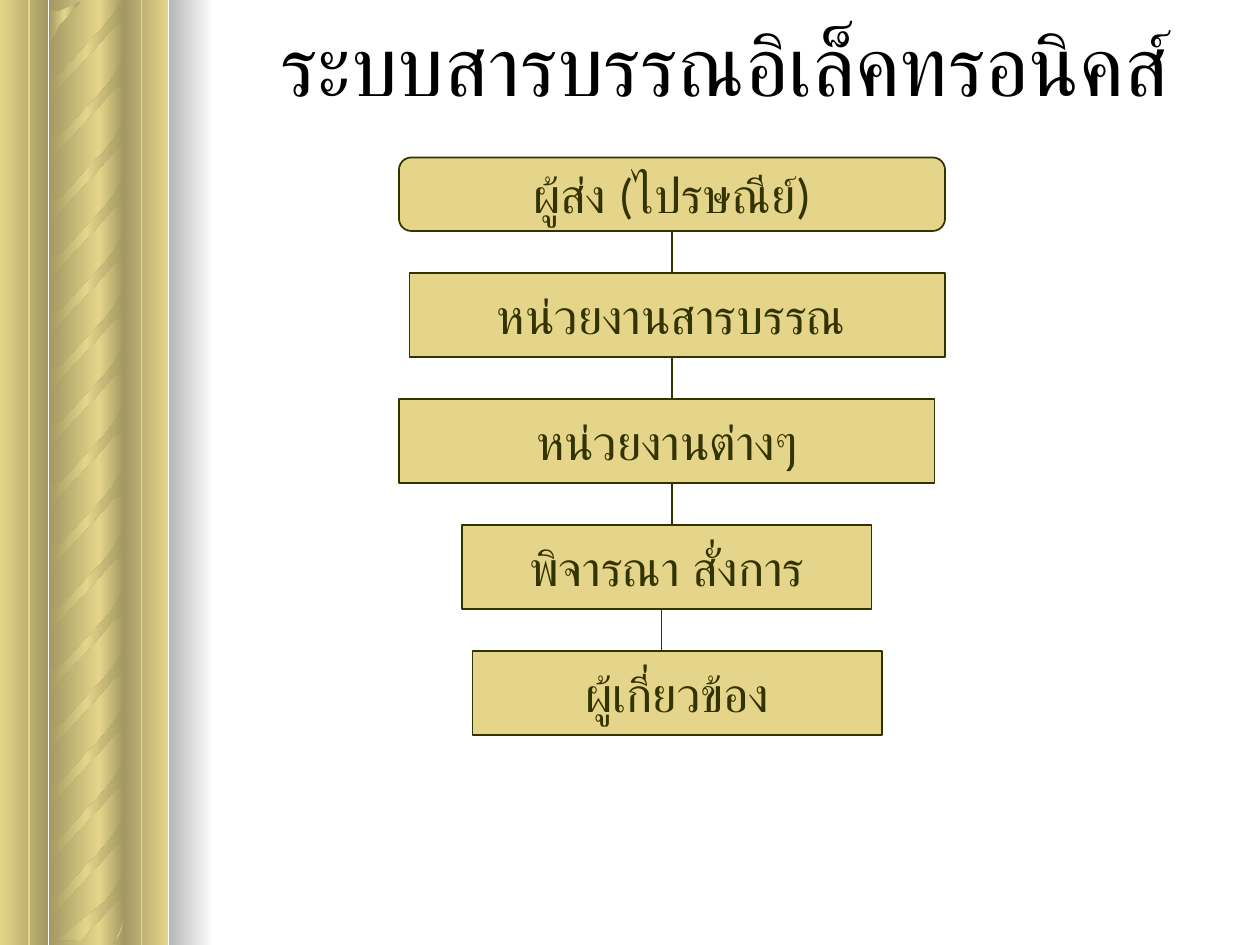
from dataclasses import dataclass

from lxml import etree
from pptx import Presentation
from pptx.dml.color import RGBColor
from pptx.enum.shapes import MSO_CONNECTOR, MSO_SHAPE
from pptx.enum.text import MSO_ANCHOR, PP_ALIGN
from pptx.oxml.ns import qn
from pptx.util import Pt

RECTANGLE = MSO_SHAPE.RECTANGLE
ROUNDED = MSO_SHAPE.FLOWCHART_ALTERNATE_PROCESS
STRAIGHT = MSO_CONNECTOR.STRAIGHT
MIDDLE = MSO_ANCHOR.MIDDLE
CENTER = PP_ALIGN.CENTER

WIDTH, HEIGHT = 720, 540
HALF = 269

STRAND = [
    (70.8, 6.6), (70.8, 24.2), (69.8, 23.5), (67, 23.5), (65.5, 24.2),
    (63.4, 26.2), (58.2, 32.6), (46.1, 45.7), (33.8, 59.2), (31.7, 63),
    (29.8, 66.8), (28.6, 72.5), (28, 80.5), (28, 45.5), (28.2, 49),
    (28.8, 50.3), (30, 51), (31.5, 51.5), (33.3, 51.5), (35, 50.8),
    (59.8, 23.8), (64.8, 17.4), (67, 14), (68.6, 10.4), (70, 5),
    (70.8, 0), (70.8, 14.7),
]
LOWER_TOPS = [329.8, 363.4, 395.6, 427.6, 459.6, 491.6, 295.8, 260]
UPPER_TOPS = [62.2, 94.3, 126.3, 158.3, 190.3, 522, 26.5, -9.3, -44.8, 224.6]


@dataclass(frozen=True)
class Theme:
    font: str = "Calibri"
    title_size: int = 48
    node_size: int = 28
    line_width: int = 1
    shade: str = "46275"
    gold: str = "E5D58A"
    olive: str = "333300"
    black: str = "000000"
    white: str = "FFFFFF"


class SlideBuilder:
    def __init__(self, slide, theme):
        self.shapes = slide.shapes
        self.theme = theme

    def set_text(self, shape, text, size, color, wrap):
        frame = shape.text_frame
        frame.text = text
        frame.word_wrap = wrap
        frame.vertical_anchor = MIDDLE
        paragraph = frame.paragraphs[0]
        paragraph.alignment = CENTER
        font = paragraph.runs[0].font
        font.name = self.theme.font
        font.size = Pt(size)
        font.color.rgb = RGBColor.from_string(color)

    def title(self, text, left, top, width, height):
        box = self.shapes.add_textbox(Pt(left), Pt(top), Pt(width), Pt(height))
        self.set_text(box, text, self.theme.title_size, self.theme.black, True)

    def node(self, kind, text, left, top, width, height):
        shape = self.shapes.add_shape(kind, Pt(left), Pt(top), Pt(width), Pt(height))
        shape.shadow.inherit = False
        shape.fill.solid()
        shape.fill.fore_color.rgb = RGBColor.from_string(self.theme.gold)
        shape.line.color.rgb = RGBColor.from_string(self.theme.olive)
        shape.line.width = Pt(self.theme.line_width)
        self.set_text(shape, text, self.theme.node_size, self.theme.olive, False)

    def vertical_line(self, x, top, bottom, color):
        line = self.shapes.add_connector(STRAIGHT, Pt(x), Pt(top), Pt(x), Pt(bottom))
        line.line.color.rgb = RGBColor.from_string(color)
        line.line.width = Pt(self.theme.line_width)
        etree.SubElement(line._element.spPr, qn("a:effectLst"))

    def shade_across(self, shape, color, darkened):
        shape.shadow.inherit = False
        shape.line.fill.background()
        shape.fill.gradient()
        shape.fill.gradient_angle = 0
        stops = next(shape._element.spPr.iter(qn("a:gsLst")))
        for stop in list(stops):
            stops.remove(stop)
        for index, dark in enumerate(darkened):
            position = 100000 * index // (len(darkened) - 1)
            stop = etree.SubElement(stops, qn("a:gs"), pos=str(position))
            value = etree.SubElement(stop, qn("a:srgbClr"), val=color)
            if dark:
                etree.SubElement(value, qn("a:shade"), val=self.theme.shade)

    def bar(self, left, top, width, height, color, darkened):
        shape = self.shapes.add_shape(
            RECTANGLE, Pt(left), Pt(top), Pt(width), Pt(height))
        self.shade_across(shape, color, darkened)

    def strand(self, offset, upper_limit):
        points = [(Pt(x), Pt(y + offset)) for x, y in STRAND
                  if upper_limit <= y + offset <= HEIGHT + 1]
        builder = self.shapes.build_freeform(*points[0])
        builder.add_line_segments(points[1:], close=True)
        self.shade_across(builder.convert_to_shape(), self.theme.gold,
                          (True, False, True))

    def column(self):
        gold = self.theme.gold
        fade, rise = (False, True), (True, False)
        bars = [(56.7, 14.2, fade), (0, 27.6, fade), (28, 28.7, rise), (70.8, 25.4, rise)]
        for top, tops in ((HALF, LOWER_TOPS), (-1, UPPER_TOPS)):
            for left, width, darkened in bars:
                self.bar(left, top, width, HEIGHT - HALF, gold, darkened)
            for offset in tops:
                self.strand(offset, top - 1)
        self.bar(96.3, 0, 26, HEIGHT, self.theme.white, rise)
        for x in (16.5, 80.8):
            self.vertical_line(x, 0, HEIGHT, gold)


def main():
    presentation = Presentation()
    presentation.slide_width = Pt(WIDTH)
    presentation.slide_height = Pt(HEIGHT)
    slide = presentation.slides.add_slide(presentation.slide_layouts[6])
    theme = Theme()
    builder = SlideBuilder(slide, theme)

    builder.column()
    builder.title("ระบบสารบรรณอิเล็คทรอนิคส์", 108, 0, 612, 72)

    first_top, pitch, gap = 90, 72, 24
    builder.node(ROUNDED, "ผู้ส่ง (ไปรษณีย์)", 228, first_top, 312, 42)
    steps = [
        ("หน่วยงานสารบรรณ ", 234, 306, 384),
        ("หน่วยงานต่างๆ", 228, 306, 384),
        ("พิจารณา สั่งการ", 264, 234, 384),
        ("ผู้เกี่ยวข้อง", 270, 234, 378),
    ]
    for number, (text, left, width, line_x) in enumerate(steps, start=1):
        top = first_top - 6 + pitch * number
        builder.vertical_line(line_x, top - gap, top, theme.olive)
        builder.node(RECTANGLE, text, left, top, width, pitch - gap)

    presentation.save("out.pptx")


if __name__ == "__main__":
    main()
